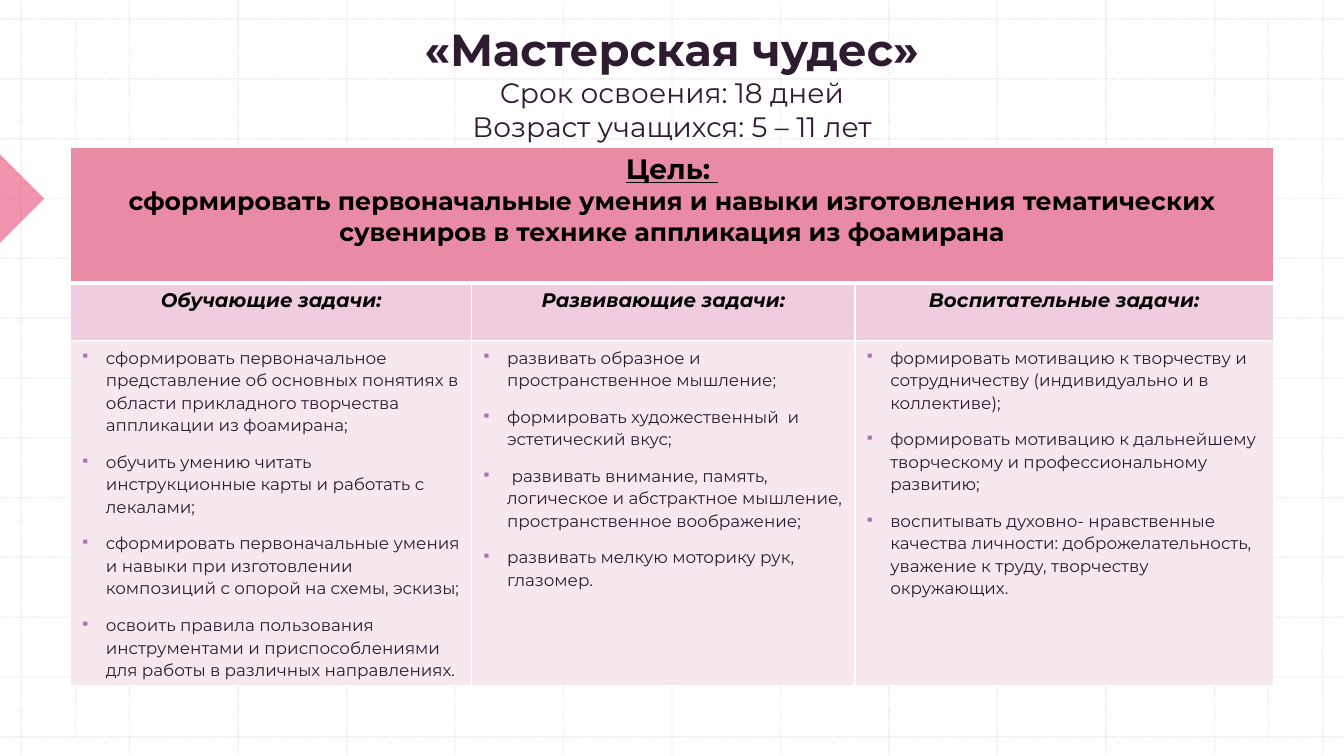
from dataclasses import dataclass

import lxml.etree
import pptx
import pptx.dml.color
import pptx.enum.dml
import pptx.enum.shapes
import pptx.enum.text
import pptx.oxml.ns
import pptx.util

Inches = pptx.util.Inches
Pt = pptx.util.Pt
qn = pptx.oxml.ns.qn
CENTER = pptx.enum.text.PP_ALIGN.CENTER


@dataclass(frozen=True)
class Theme:
    font: str = "Montserrat"
    ink: str = "2E1B30"
    black: str = "000000"
    white: str = "FFFFFF"
    grid: str = "BCBCBC"
    accent: str = "E7295E"
    bullet: str = "AB74B1"
    goal_fill: str = "EA8BA5"
    heading_fill: str = "EFCCDE"
    tasks_fill: str = "F7E8EF"
    title_size: int = 32
    subtitle_size: int = 20
    goal_size: int = 18
    heading_size: int = 14
    task_size: int = 12


THEME = Theme()
SLIDE_WIDTH, SLIDE_HEIGHT = 13.33, 7.5

TITLE = "«Мастерская чудес»"
SUBTITLES = ["Срок освоения: 18 дней", "Возраст учащихся: 5 – 11 лет"]
GOAL_LABEL = "Цель: "
GOAL = ("сформировать первоначальные умения и навыки изготовления тематических "
        "сувениров в технике аппликация из фоамирана")
TASKS = {
    "Обучающие задачи:": [
        "сформировать первоначальное представление об основных понятиях в области "
        "прикладного творчества аппликации из фоамирана;",
        "обучить умению читать инструкционные карты и работать с лекалами;",
        "сформировать первоначальные умения и навыки при изготовлении композиций "
        "с опорой на схемы, эскизы;",
        "освоить правила пользования инструментами и приспособлениями для работы "
        "в различных направлениях.",
    ],
    "Развивающие задачи:": [
        "развивать образное и пространственное мышление;",
        "формировать художественный  и эстетический вкус;",
        " развивать внимание, память, логическое и абстрактное мышление, "
        "пространственное воображение;",
        "развивать мелкую моторику рук, глазомер.",
    ],
    "Воспитательные задачи:": [
        "формировать мотивацию к творчеству и сотрудничеству (индивидуально и "
        "в коллективе);",
        "формировать мотивацию к дальнейшему творческому и профессиональному развитию;",
        "воспитывать духовно- нравственные качества личности: доброжелательность, "
        "уважение к труду, творчеству окружающих.",
    ],
}


def rgb(color):
    return pptx.dml.color.RGBColor.from_string(color)


def set_values(target, values):
    for name, value in values.items():
        setattr(target, name, value)


def add_child(parent, tag, **attributes):
    return lxml.etree.SubElement(parent, qn(tag), attributes)


def set_opacity(shape, percent):
    color = next(shape._element.iter(qn("a:srgbClr")))
    add_child(color, "a:alpha", val=str(percent * 1000))


def add_run(paragraph, text, size, color, **font_values):
    run = paragraph.add_run()
    run.text = text
    set_values(run.font, {"name": THEME.font, "size": Pt(size), **font_values})
    run.font.color.rgb = rgb(color)


def add_grid_line(slide, start, end):
    line = slide.shapes.add_connector(
        pptx.enum.shapes.MSO_CONNECTOR.STRAIGHT, *map(Inches, start + end))
    line.line.color.rgb = rgb(THEME.grid)
    set_values(line.line, {"width": Pt(1),
                           "dash_style": pptx.enum.dml.MSO_LINE.ROUND_DOT})
    set_opacity(line, 30)
    add_child(line._element.spPr, "a:effectLst")


def add_background(slide, width, height):
    """Draw the dotted grid, its side margins and the marker on the left edge."""
    count, left, top, side = 13, 0.21, 0.19, 0.75
    column_step = (width - 2 * left) / (count - 1)
    row_step = (height - 2 * top) / (count - 1)
    for index in range(count):
        x, y = left + index * column_step, top + index * row_step
        add_grid_line(slide, (x, 0), (x, height))
        add_grid_line(slide, (0, y), (width, y))
    for x in (side, width - side):
        add_grid_line(slide, (x, top), (x, height - top))

    size, middle = 0.62, 1.97
    marker = slide.shapes.add_shape(
        pptx.enum.shapes.MSO_SHAPE.RIGHT_TRIANGLE, Inches(-size / 2),
        Inches(middle - size / 2), Inches(size), Inches(size))
    marker.rotation = 225
    marker.shadow.inherit = False
    marker.fill.solid()
    marker.fill.fore_color.rgb = rgb(THEME.accent)
    set_opacity(marker, 50)
    marker.line.fill.background()


def add_title(slide, left, top, width, height):
    box = slide.shapes.add_textbox(*map(Inches, (left, top, width, height)))
    set_values(box.text_frame, {
        "word_wrap": True, "margin_bottom": Inches(0.76),
        "vertical_anchor": pptx.enum.text.MSO_ANCHOR.BOTTOM})
    paragraph = box.text_frame.paragraphs[0]
    paragraph.alignment = CENTER
    add_run(paragraph, TITLE, THEME.title_size, THEME.ink, bold=True)
    for subtitle in SUBTITLES:
        paragraph.add_line_break()
        add_run(paragraph, subtitle, THEME.subtitle_size, THEME.ink, bold=False)


def style_cell(cell, fill, bottom_width=1):
    properties = cell._tc.get_or_add_tcPr()
    widths = {"a:lnL": 1, "a:lnR": 1, "a:lnT": 1, "a:lnB": bottom_width}
    for tag, width in widths.items():
        border = add_child(properties, tag, w=str(Pt(width)))
        add_child(add_child(border, "a:solidFill"), "a:srgbClr", val=THEME.white)
    cell.fill.solid()
    cell.fill.fore_color.rgb = rgb(fill)


def fill_goal(cell):
    label = cell.text_frame.paragraphs[0]
    goal = cell.text_frame.add_paragraph()
    label.alignment = goal.alignment = CENTER
    add_run(label, GOAL_LABEL, THEME.subtitle_size, THEME.black,
            bold=True, underline=True)
    add_run(goal, GOAL, THEME.goal_size, THEME.black, bold=True)


def fill_heading(cell, heading):
    paragraph = cell.text_frame.paragraphs[0]
    paragraph.alignment = CENTER
    add_run(paragraph, heading, THEME.heading_size, THEME.black,
            bold=True, italic=True)


def fill_tasks(cell, tasks):
    frame = cell.text_frame
    for index, task in enumerate(tasks):
        paragraph = frame.add_paragraph() if index else frame.paragraphs[0]
        set_values(paragraph, {"line_spacing": 1.1, "space_before": Pt(10)})
        properties = paragraph._p.get_or_add_pPr()
        properties.set("marL", str(Inches(0.25)))
        properties.set("indent", str(Inches(-0.25)))
        add_child(add_child(properties, "a:buClr"), "a:srgbClr", val=THEME.bullet)
        add_child(properties, "a:buSzPct", val="75000")
        add_child(properties, "a:buChar", char="▪")
        add_run(paragraph, task, THEME.task_size, THEME.ink, bold=False)


def add_goal_table(slide, left, top, column_widths, row_heights):
    frame = slide.shapes.add_table(
        len(row_heights), len(column_widths), Inches(left), Inches(top),
        Inches(sum(column_widths)), Inches(sum(row_heights)))
    table = frame.table
    set_values(table, {"first_row": False, "horz_banding": False})
    for column, width in zip(table.columns, column_widths):
        column.width = Inches(width)
    for row, height in zip(table.rows, row_heights):
        row.height = Inches(height)

    table.cell(0, 0).merge(table.cell(0, len(column_widths) - 1))
    fill_goal(table.cell(0, 0))
    for index, (heading, tasks) in enumerate(TASKS.items()):
        style_cell(table.cell(0, index), THEME.goal_fill, bottom_width=3)
        style_cell(table.cell(1, index), THEME.heading_fill)
        style_cell(table.cell(2, index), THEME.tasks_fill)
        fill_heading(table.cell(1, index), heading)
        fill_tasks(table.cell(2, index), tasks)


def main():
    presentation = pptx.Presentation()
    set_values(presentation, {"slide_width": Inches(SLIDE_WIDTH),
                              "slide_height": Inches(SLIDE_HEIGHT)})
    slide = presentation.slides.add_slide(presentation.slide_layouts[6])
    add_background(slide, SLIDE_WIDTH, SLIDE_HEIGHT)
    add_goal_table(slide, 0.7, 1.46, (3.98, 3.8, 4.15), (1.35, 0.57, 3.42))
    add_title(slide, 1.02, -0.56, 11.29, 2.74)
    presentation.save("out.pptx")


if __name__ == "__main__":
    main()
